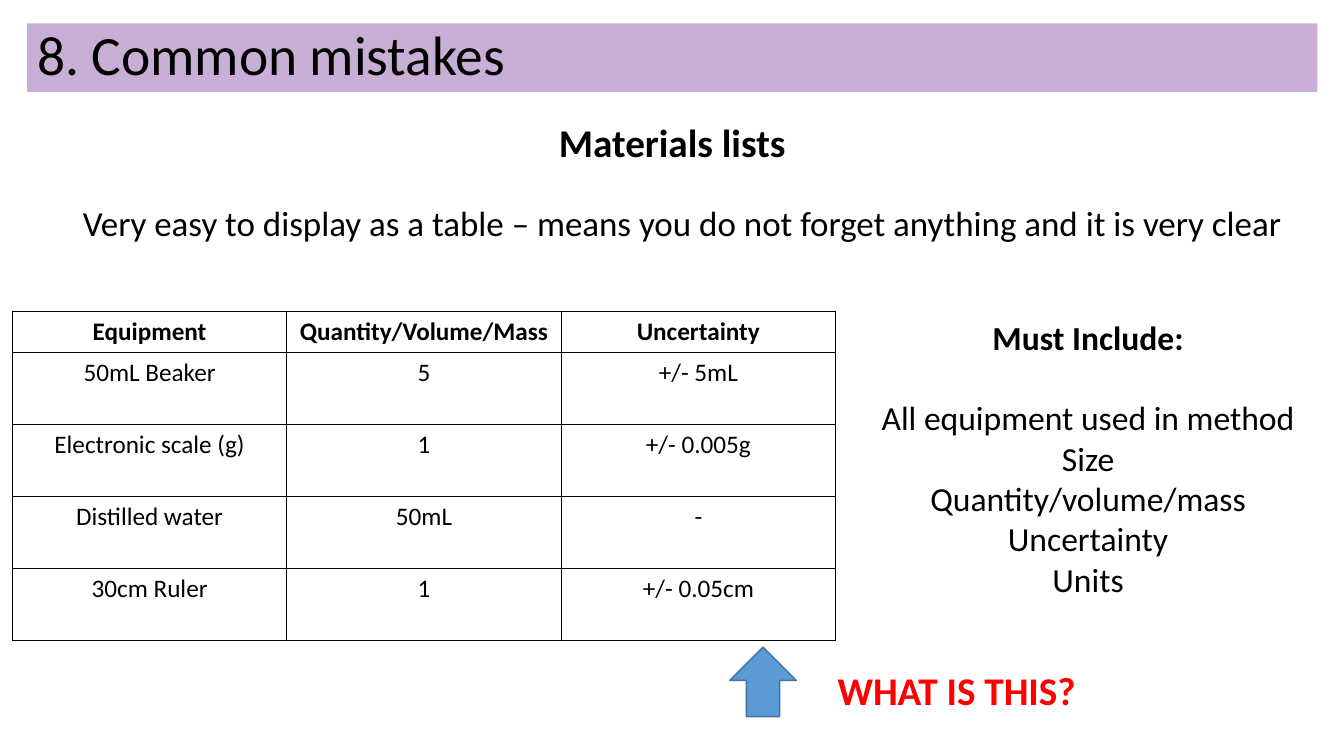
"""Build the slide on materials lists, a section on common mistakes."""
from lxml.etree import SubElement
from pptx import Presentation
from pptx.dml.color import RGBColor
from pptx.enum.shapes import MSO_SHAPE as Shape
from pptx.enum.text import MSO_ANCHOR as Anchor, MSO_AUTO_SIZE as AutoSize, PP_ALIGN as Align
from pptx.oxml.ns import qn
from pptx.util import Pt

TITLE = "8. Common mistakes"
HEADING = "Materials lists"
ADVICE = "Very easy to display as a table – means you do not forget anything and it is very clear"
MATERIALS = [
    ("Equipment", "Quantity/Volume/Mass", "Uncertainty"),
    ("50mL Beaker", "5", "+/- 5mL"),
    ("Electronic scale (g)", "1", "+/- 0.005g"),
    ("Distilled water", "50mL", "-"),
    ("30cm Ruler", "1", "+/- 0.05cm"),
]
REQUIREMENTS = [
    "Must Include:",
    "All equipment used in method",
    "Size",
    "Quantity/volume/mass",
    "Uncertainty",
    "Units",
]
QUESTION = "WHAT IS THIS?"

FONT = "Calibri"
BLACK, RED, LILAC, BLUE, NAVY = "000000", "FF0000", "C9AED5", "5B9BD5", "43739E"
LEFT, FULL_WIDTH, LINE_HEIGHT = 19.4, 921.6, 54
TABLE_LEFT, TABLE_TOP, COLUMN_WIDTH = 8.9, 222.5, 196
HEADER_HEIGHT, ROW_HEIGHT = 29.2, 51.4


def color(hex_code):
    return RGBColor.from_string(hex_code)


def style(paragraph, size, bold=False, ink=BLACK, align=Align.CENTER):
    paragraph.alignment = align
    paragraph.space_before = Pt(0)
    font = paragraph.font
    font.name, font.size, font.bold = FONT, Pt(size), bold
    font.color.rgb = color(ink)


def place(shape, left, top, width, height):
    shape.left, shape.top, shape.width, shape.height = map(Pt, (left, top, width, height))


def add_text(slide, box, lines, size, bold=False, ink=BLACK):
    frame = slide.shapes.add_textbox(*map(Pt, box)).text_frame
    frame.word_wrap = True
    frame.text = "\n".join(lines)
    for paragraph in frame.paragraphs:
        style(paragraph, size, bold, ink)
    return frame


def add_borders(cell):
    properties = cell._tc.get_or_add_tcPr()
    for index, side in enumerate(("lnL", "lnR", "lnT", "lnB")):
        border = SubElement(properties, qn(f"a:{side}"), w=str(Pt(1)))
        fill = SubElement(border, qn("a:solidFill"))
        SubElement(fill, qn("a:srgbClr"), val=BLACK)
        properties.insert(index, border)


def add_materials(slide):
    rows, columns = len(MATERIALS), len(MATERIALS[0])
    heights = [HEADER_HEIGHT] + [ROW_HEIGHT] * (rows - 1)
    table = slide.shapes.add_table(
        rows, columns, Pt(TABLE_LEFT), Pt(TABLE_TOP), Pt(COLUMN_WIDTH * columns), Pt(sum(heights))
    ).table
    for column in table.columns:
        column.width = Pt(COLUMN_WIDTH)
    for row_index, (entries, height) in enumerate(zip(MATERIALS, heights)):
        table.rows[row_index].height = Pt(height)
        for column_index, entry in enumerate(entries):
            cell = table.cell(row_index, column_index)
            cell.text = entry
            style(cell.text_frame.paragraphs[0], 18, bold=row_index == 0)
            cell.fill.background()
            add_borders(cell)


def main():
    deck = Presentation()
    deck.slide_width, deck.slide_height = Pt(960), Pt(540)
    slide = deck.slides.add_slide(deck.slide_layouts[1])

    title, heading = slide.placeholders
    place(title, LEFT, 16.6, FULL_WIDTH, 49)
    title.fill.solid()
    title.fill.fore_color.rgb = color(LILAC)
    title.text_frame.text = TITLE
    title.text_frame.auto_size = AutoSize.NONE
    title.text_frame.vertical_anchor = Anchor.MIDDLE
    title_line = title.text_frame.paragraphs[0]
    style(title_line, 39.6, align=Align.LEFT)
    title_line.line_spacing = 0.9

    place(heading, LEFT, 80.6, FULL_WIDTH, LINE_HEIGHT)
    heading.text_frame.text = HEADING
    heading.text_frame.auto_size = AutoSize.NONE
    heading_line = heading.text_frame.paragraphs[0]
    style(heading_line, 28, bold=True)
    bullet_free = heading_line._p.get_or_add_pPr()
    bullet_free.set("marL", "0")
    bullet_free.set("indent", "0")
    SubElement(bullet_free, qn("a:buNone"))
    bullet_free.append(bullet_free.find(qn("a:defRPr")))

    advice = add_text(slide, (49.7, 144, 874.8, 156.2), [ADVICE], 25).paragraphs[0]
    advice.line_spacing = 0.9
    advice.space_before = Pt(10)

    add_materials(slide)

    requirements = add_text(slide, (613.4, TABLE_TOP, 327.6, 239.8), REQUIREMENTS, 24)
    requirements.auto_size = AutoSize.SHAPE_TO_FIT_TEXT
    must_include = requirements.paragraphs[0]
    must_include.font.bold = True
    must_include.space_after = Pt(29)

    arrow = slide.shapes.add_shape(Shape.UP_ARROW, Pt(521.3), Pt(462.2), Pt(47.5), Pt(49.7))
    arrow.shadow.inherit = False
    arrow.fill.solid()
    arrow.fill.fore_color.rgb = color(BLUE)
    arrow.line.color.rgb = color(NAVY)
    arrow.line.width = Pt(1)

    add_text(slide, (222.5, 472.3, FULL_WIDTH, LINE_HEIGHT), [QUESTION], 28, bold=True, ink=RED)

    deck.save("out.pptx")


if __name__ == "__main__":
    main()
